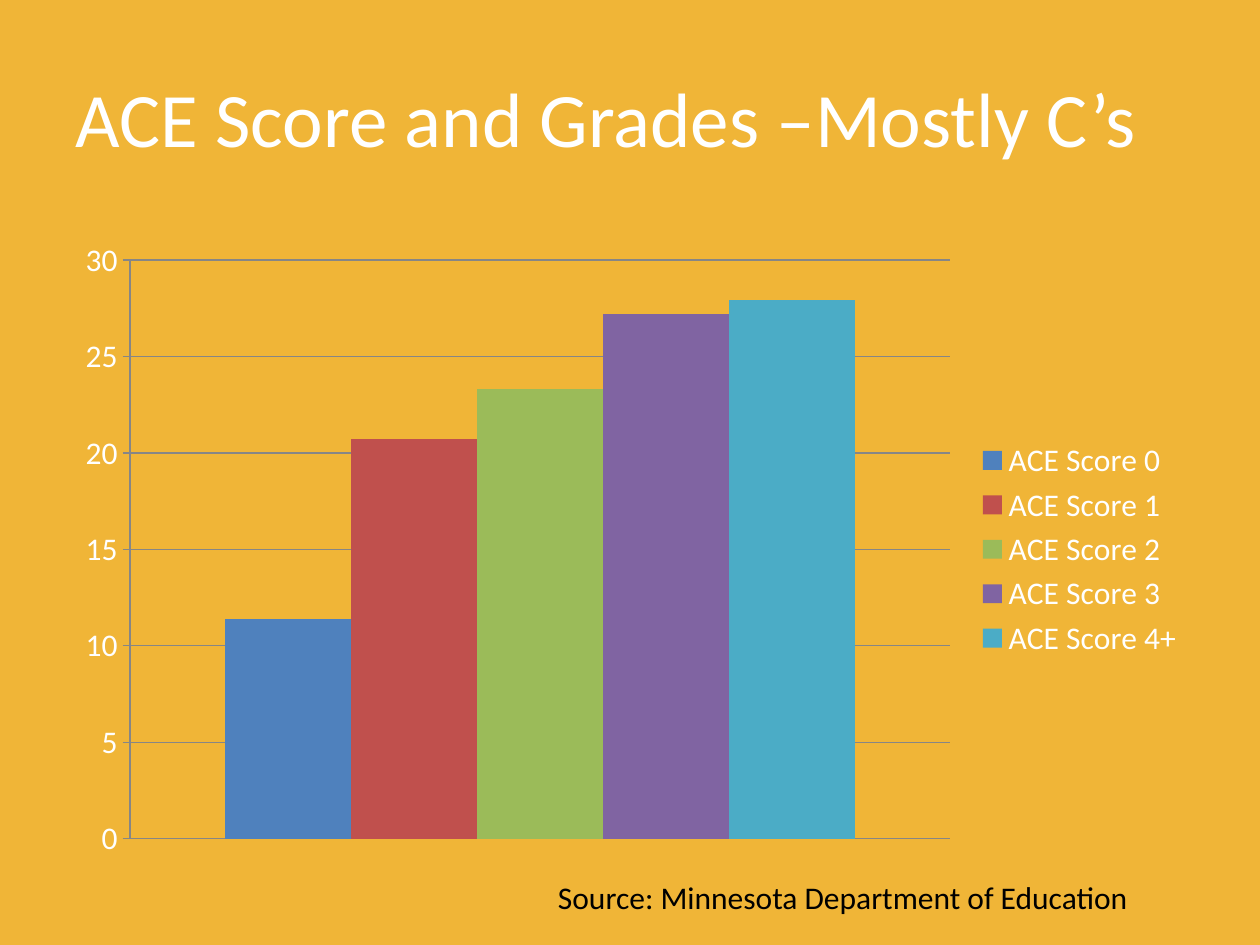
import pptx
import pptx.chart.data
import pptx.dml.color
import pptx.enum.chart
import pptx.enum.text
import pptx.util
from pptx.util import Inches

FONT = "Calibri"
COLORS = {
    "background": "F0B537",
    "light": "FFFFFF",
    "dark": "000000",
    "grid": "868686",
}
SCORES = [
    ("ACE Score 0", 11.4, "4F81BD"),
    ("ACE Score 1", 20.7, "C0504D"),
    ("ACE Score 2", 23.3, "9BBB59"),
    ("ACE Score 3", 27.2, "8064A2"),
    ("ACE Score 4+", 27.9, "4BACC6"),
]


def rgb(value):
    return pptx.dml.color.RGBColor.from_string(value)


def style_font(font, size, color):
    font.name = FONT
    font.size = pptx.util.Pt(size)
    font.color.rgb = rgb(color)


def add_text(slide, box, text, size, color, wrap=True):
    frame = slide.shapes.add_textbox(*box).text_frame
    frame.word_wrap = wrap
    frame.vertical_anchor = pptx.enum.text.MSO_ANCHOR.MIDDLE
    para = frame.paragraphs[0]
    para.alignment = pptx.enum.text.PP_ALIGN.LEFT
    span = para.add_run()
    span.text = text
    style_font(span.font, size, color)


def add_grades_chart(slide, box):
    data = pptx.chart.data.CategoryChartData()
    data.categories = ["1"]
    for name, share, color in SCORES:
        data.add_series(name, [share])
    chart = slide.shapes.add_chart(
        pptx.enum.chart.XL_CHART_TYPE.COLUMN_CLUSTERED, *box, data
    ).chart
    style_font(chart.font, 18, COLORS["light"])
    chart.has_title = False

    chart.has_legend = True
    chart.legend.position = pptx.enum.chart.XL_LEGEND_POSITION.RIGHT
    chart.legend.include_in_layout = False

    plot = chart.plots[0]
    plot.gap_width = 150
    plot.overlap = 0
    plot.vary_by_categories = False
    for series, (name, share, color) in zip(plot.series, SCORES):
        series.format.fill.solid()
        series.format.fill.fore_color.rgb = rgb(color)

    chart.category_axis.visible = False
    axis = chart.value_axis
    axis.minimum_scale, axis.maximum_scale, axis.major_unit = 0, 30, 5
    axis.major_tick_mark = pptx.enum.chart.XL_TICK_MARK.OUTSIDE
    axis.has_major_gridlines = True
    for line in (axis.format.line, axis.major_gridlines.format.line):
        line.color.rgb = rgb(COLORS["grid"])
        line.width = pptx.util.Pt(0.75)


def main():
    deck = pptx.Presentation()
    deck.slide_width, deck.slide_height = Inches(10), Inches(7.5)
    page = deck.slides.add_slide(deck.slide_layouts[6])
    page.background.fill.solid()
    page.background.fill.fore_color.rgb = rgb(COLORS["background"])

    title_box = (Inches(0.5), Inches(0.3), Inches(9), Inches(1.25))
    chart_box = (Inches(0.5), Inches(1.81), Inches(9), Inches(5.1))
    source_box = (Inches(4.33), Inches(6.92), Inches(4.78), Inches(0.4))
    add_text(page, title_box, "ACE Score and Grades –Mostly C’s", 44, COLORS["light"])
    add_grades_chart(page, chart_box)
    add_text(page, source_box, "Source: Minnesota Department of Education", 18,
             COLORS["dark"], wrap=False)
    deck.save("out.pptx")


if __name__ == "__main__":
    main()
